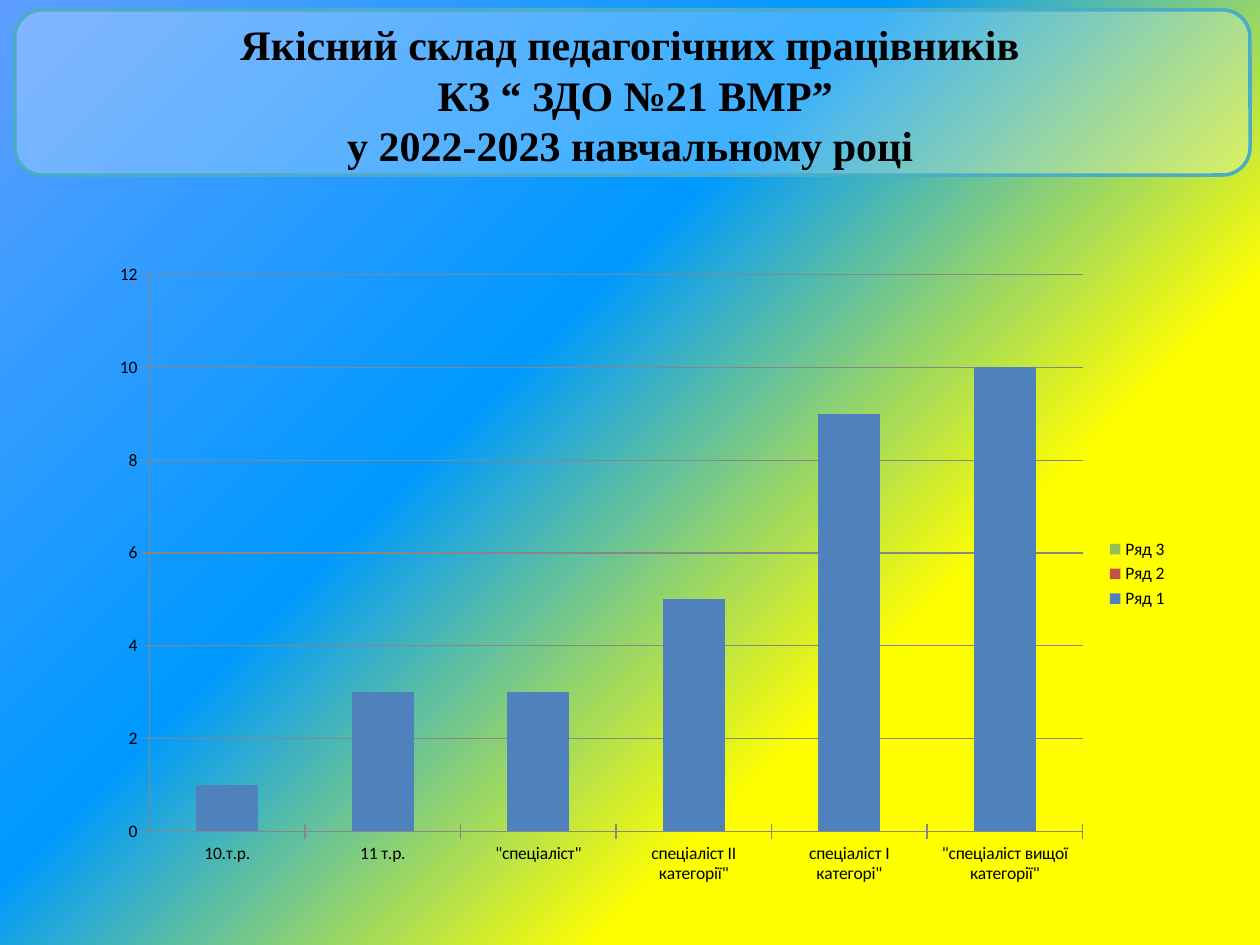
from lxml import etree
from pptx import Presentation
from pptx.chart.data import CategoryChartData
from pptx.dml.color import RGBColor
from pptx.enum.chart import XL_CHART_TYPE as ChartType, XL_LEGEND_POSITION as LegendPos, XL_TICK_MARK as Tick
from pptx.enum.shapes import MSO_SHAPE as Shape
from pptx.enum.text import MSO_ANCHOR as Anchor, MSO_AUTO_SIZE as AutoSize, PP_ALIGN as Align
from pptx.oxml.ns import qn
from pptx.util import Cm, Pt

STOPS = [(0, "5E9EFF"), (40, "0099FF"), (70, "FFFF00"), (100, "FFFF00")]
TITLE = "Якісний склад педагогічних працівників\v КЗ “ ЗДО №21 ВМР”\vу 2022-2023 навчальному році"
CATEGORIES = ["10.т.р.", "11 т.р.", '"спеціаліст"', 'спеціаліст ІІ категорії"',
              'спеціаліст І категорі"', '"спеціаліст вищої категорії"']
SERIES = [("Ряд 1", [1, 3, 3, 5, 9, 10], "4F81BD"),
          ("Ряд 2", [None] * 6, "C0504D"),
          ("Ряд 3", [None] * 6, "9BBB59")]


def color(value):
    return RGBColor.from_string(value)


def paint_background(s):
    fill = s.background.fill
    fill.gradient()
    fill.gradient_angle = 315
    gs_list = s._element.find(".//" + qn("a:gsLst"))
    for gs in list(gs_list):
        gs_list.remove(gs)
    for position, value in STOPS:
        gs = etree.SubElement(gs_list, qn("a:gs"), pos=str(position * 1000))
        etree.SubElement(gs, qn("a:srgbClr"), val=value)


def add_header(s, left, top, width, height):
    panel = s.shapes.add_shape(Shape.ROUNDED_RECTANGLE, left + Cm(0.3), top, width - Cm(0.5), height)
    panel.shadow.inherit = False
    panel.fill.solid()
    panel.fill.fore_color.rgb = color("FFFFFF")
    white = panel._element.spPr.find(qn("a:solidFill"))[0]
    etree.SubElement(white, qn("a:alpha"), val="24000")
    panel.line.color.rgb = color("4BACC6")
    panel.line.width = Pt(2)

    title = s.shapes.title
    panel._element.addnext(title._element)
    title.left, title.top, title.width, title.height = left, top + Cm(0.5), width, Cm(2.41)
    tf = title.text_frame
    tf.text = TITLE
    tf.word_wrap = True
    tf.auto_size = AutoSize.NONE
    tf.vertical_anchor = Anchor.MIDDLE
    p = tf.paragraphs[0]
    p.alignment = Align.CENTER
    for r in p.runs:
        r.font.name = "Times New Roman"
        r.font.size = Pt(24)
        r.font.bold = True
        r.font.color.rgb = color("000000")


def add_staff_chart(s, left, top, width, height):
    data = CategoryChartData()
    data.categories = CATEGORIES
    for name, values, _ in SERIES:
        data.add_series(name, values)
    chart = s.shapes.add_chart(ChartType.COLUMN_STACKED, left, top, width, height, data).chart
    chart.has_title = False
    chart.font.name = "Calibri"
    chart.font.size = Pt(10)
    chart.font.color.rgb = color("000000")

    plot = chart.plots[0]
    plot.vary_by_categories = False
    plot.gap_width = 150
    plot.overlap = 100
    for series, (_, _, value) in zip(plot.series, SERIES):
        series.format.fill.solid()
        series.format.fill.fore_color.rgb = color(value)

    chart.value_axis.has_major_gridlines = True
    gridlines = chart.value_axis.major_gridlines
    for part in (chart.category_axis, chart.value_axis, gridlines):
        part.format.line.color.rgb = color("878787")
        part.format.line.width = Pt(0.75)
    for axis in (chart.category_axis, chart.value_axis):
        axis.major_tick_mark = Tick.CROSS

    chart.has_legend = True
    chart.legend.position = LegendPos.RIGHT
    chart.legend.include_in_layout = False


def main():
    prs = Presentation()
    prs.slide_width, prs.slide_height = Cm(25.4), Cm(19.05)
    s = prs.slides.add_slide(prs.slide_layouts[0])
    subtitle = s.placeholders[1]._element
    subtitle.getparent().remove(subtitle)
    paint_background(s)
    add_header(s, 0, Cm(0.2), prs.slide_width, Cm(3.33))
    add_staff_chart(s, Cm(1.98), Cm(5.08), Cm(21.82), Cm(12.98))
    prs.save("out.pptx")


if __name__ == "__main__":
    main()
